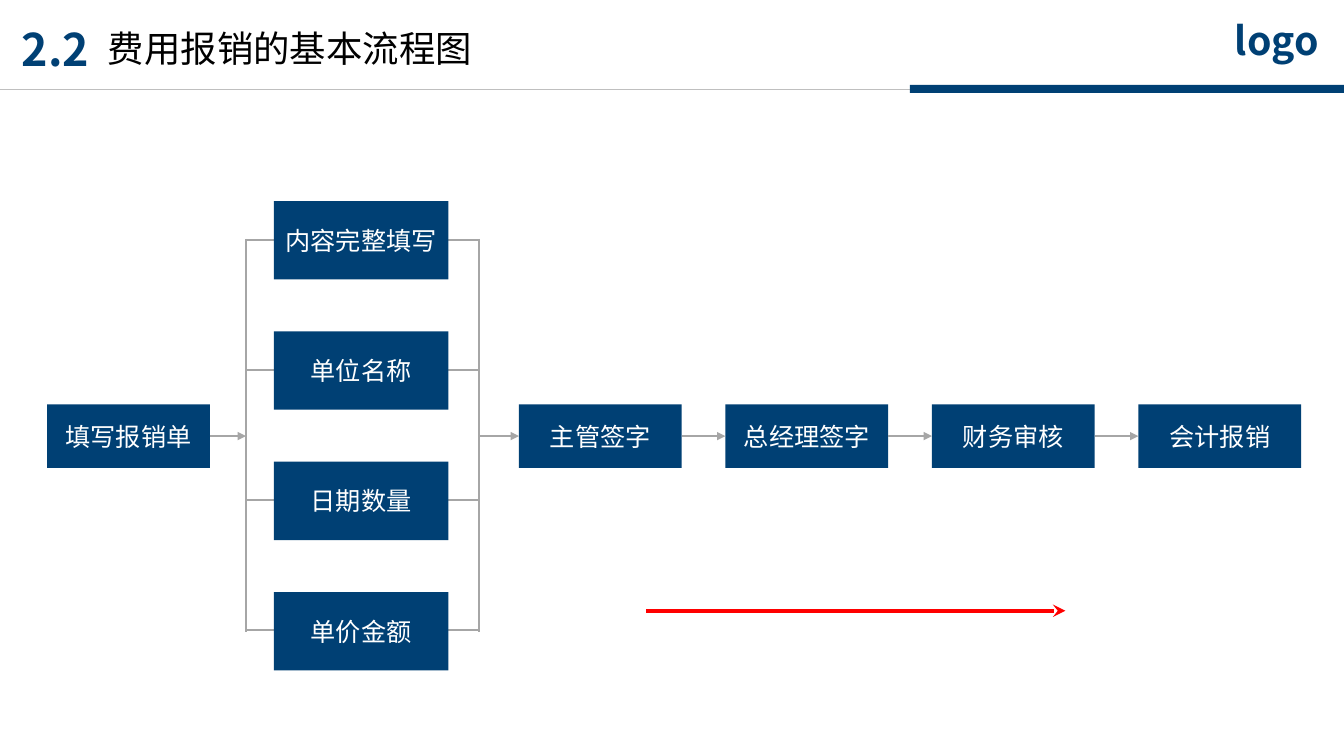
from lxml import etree
from pptx import Presentation
from pptx.dml.color import RGBColor
from pptx.enum import shapes as sh, text as tx
from pptx.oxml.ns import qn
from pptx.util import Pt

NAVY = RGBColor(0x00, 0x40, 0x74)
GRAY = RGBColor(0xA6, 0xA6, 0xA6)
PALE = RGBColor(0xBF, 0xBF, 0xBF)
RED = RGBColor(0xFF, 0x00, 0x00)
BLACK = RGBColor(0x00, 0x00, 0x00)
WHITE = RGBColor(0xFF, 0xFF, 0xFF)
FONT = "Noto Sans CJK SC"
WIDE, HIGH = 960, 540
CHECKS = ["内容完整填写", "单位名称", "日期数量", "单价金额"]
STEPS = ["主管签字", "总经理签字", "财务审核", "会计报销"]


def write(frame, words, size, color, bold=False):
    """Put one styled line of text into a text frame."""
    frame.text = words
    run = frame.paragraphs[0].runs[0]
    run.font.size, run.font.bold, run.font.name = Pt(size), bold, FONT
    run.font.color.rgb = color
    etree.SubElement(run.font._element, qn("a:ea")).set("typeface", FONT)


def label(slide, x, y, w, h, words, size, color, bold=False):
    """Add a text box that keeps its text on one line."""
    frame = slide.shapes.add_textbox(Pt(x), Pt(y), Pt(w), Pt(h)).text_frame
    frame.word_wrap = False
    write(frame, words, size, color, bold)


def block(slide, x, y, w, h, words=""):
    """Add a navy rectangle with optional centred text."""
    box = slide.shapes.add_shape(sh.MSO_SHAPE.RECTANGLE, Pt(x), Pt(y), Pt(w), Pt(h))
    box.shadow.inherit = False
    box.fill.solid()
    box.fill.fore_color.rgb = NAVY
    box.line.fill.background()
    if words:
        write(box.text_frame, words, 18, WHITE)
        box.text_frame.paragraphs[0].alignment = tx.PP_ALIGN.CENTER
        box.text_frame.vertical_anchor = tx.MSO_ANCHOR.MIDDLE
    return box


def line(slide, x1, y1, x2, y2, color=GRAY, width=1.25, tip=None):
    """Add a straight line with an optional arrowhead at its end."""
    link = slide.shapes.add_connector(
        sh.MSO_CONNECTOR.STRAIGHT, Pt(x1), Pt(y1), Pt(x2), Pt(y2))
    link.line.color.rgb = color
    link.line.width = Pt(width)
    props = link.element.spPr
    if tip:
        etree.SubElement(props.find(qn("a:ln")), qn("a:tailEnd")).set("type", tip)
    etree.SubElement(props, qn("a:effectLst"))
    return link


def header(slide, x, y, w):
    """Draw the title row with its rule and accent bar."""
    line(slide, x, y + 63.7, x + w, y + 63.7, PALE, 0.5)
    block(slide, x + w - 310, y + 60.6, 310, 5.8)
    label(slide, x + 70, y + 15, 277, 39, "费用报销的基本流程图", 26, BLACK)
    label(slide, x + 8.6, y + 12.3, 63.4, 46, "2.2", 32, NAVY, True)
    label(slide, x + w - 85, y + 8, 77, 41, "logo", 28, NAVY, True)


def checks(slide, x, y, w):
    """Draw the stacked checks between two vertical rails."""
    wide, high, gap = 124.6, 56, 93.1
    left = x + 20
    for rail, end in ((x, left + 7), (x + w, left + wide - 6)):
        line(slide, rail, y + 27, rail, y + 307.8)
        for row in range(len(CHECKS)):
            level = y + 27.8 + row * 92.88
            line(slide, end, level, rail, level)
    for row, words in enumerate(CHECKS):
        block(slide, left, y + row * gap, wide, high, words)


def steps(slide, x, y, rails):
    """Draw the row of steps, joined by arrows through the rails."""
    wide, high, gap = 116.2, 45.4, 147.5
    mid = y + high / 2
    first = block(slide, x, y, wide, high, "填写报销单")
    link = line(slide, x + wide, mid, rails[0], mid, tip="triangle")
    link.begin_connect(first, 3)
    start, last = x + 337, None
    for col, words in enumerate(STEPS):
        left = start + col * gap
        box = block(slide, left, y, wide, high, words)
        tail = left - gap + wide if last else rails[1]
        link = line(slide, tail, mid, left, mid, tip="triangle")
        if last:
            link.begin_connect(last, 3)
        link.end_connect(box, 1)
        last = box


def main():
    """Build and save the flow chart slide."""
    deck = Presentation()
    deck.slide_width, deck.slide_height = Pt(WIDE), Pt(HIGH)
    slide = deck.slides.add_slide(deck.slide_layouts[6])
    checks(slide, 175.7, 143.6, 166.3)
    steps(slide, 33.7, 288.8, (175.7, 342))
    line(slide, 461.5, 436.3, 761, 436.3, RED, 3, "stealth")
    header(slide, 0, 0, WIDE)
    deck.save("out.pptx")


if __name__ == "__main__":
    main()
